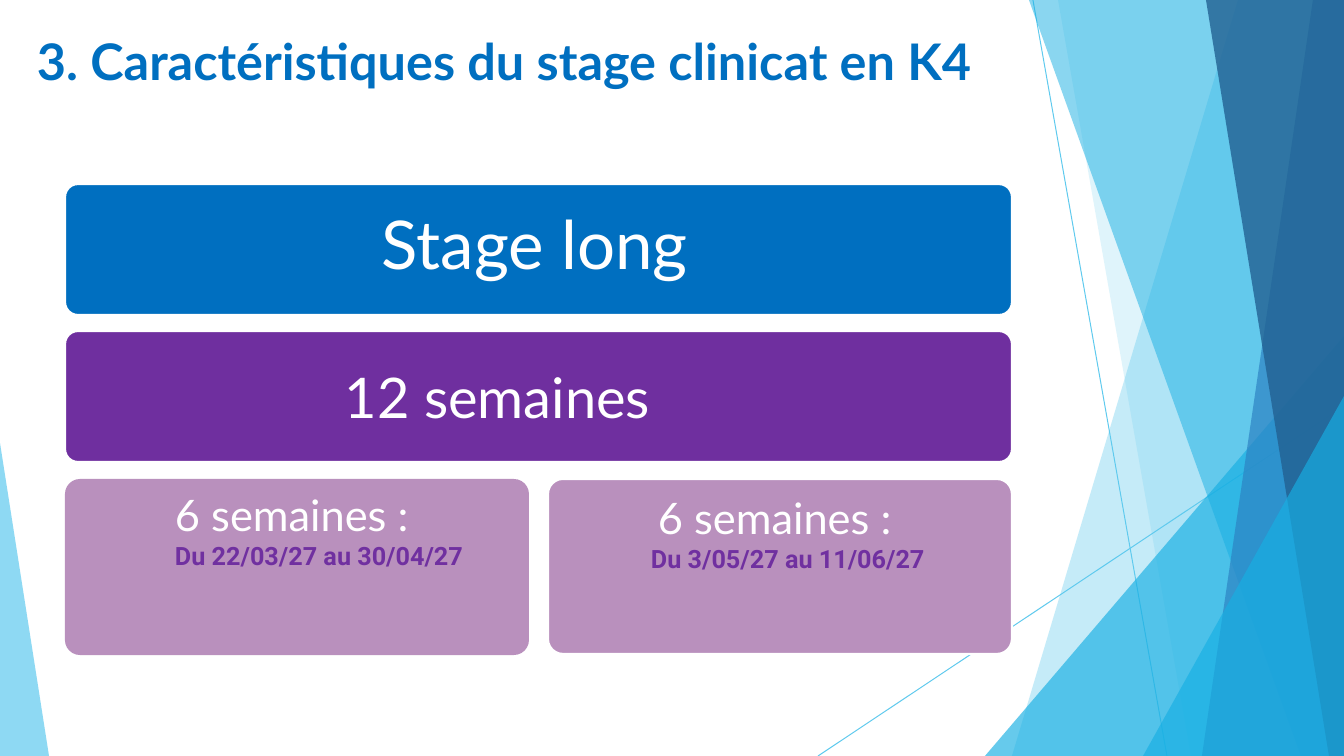
from typing import NamedTuple

from lxml.etree import SubElement
from pptx import Presentation
from pptx.dml.color import RGBColor
from pptx.enum.shapes import MSO_CONNECTOR, MSO_SHAPE
from pptx.oxml.ns import qn
from pptx.util import Emu, Pt

W, H = 1344, 756
SCALE = 12192000 / W

WHITE = RGBColor(0xFF, 0xFF, 0xFF)
BLUE = RGBColor(0x00, 0x6F, 0xC0)
PURPLE = RGBColor(0x6F, 0x2F, 0x9F)
MAUVE = RGBColor(0xB9, 0x90, 0xBD)
VIOLET = RGBColor(0x70, 0x30, 0xA0)
SKY = RGBColor(0x5F, 0xCA, 0xEE)
CYAN = RGBColor(0x17, 0xAF, 0xE3)
STEEL = RGBColor(0x2D, 0x83, 0xC3)
NAVY = RGBColor(0x22, 0x61, 0x92)


class Facet(NamedTuple):
    points: tuple[tuple[int, int], ...]
    color: RGBColor
    opacity: int


class Ray(NamedTuple):
    x1: int
    y1: int
    x2: int
    y2: int


class Panel(NamedTuple):
    x: int
    y: int
    w: int
    h: int
    color: RGBColor
    radius: int
    outlined: bool = True


class Line(NamedTuple):
    text: str
    size: int
    color: RGBColor = WHITE
    font: str = "Lato"
    bold: bool = False
    indent: int = 0
    spacing: float | None = None


class Label(NamedTuple):
    x: int
    y: int
    w: int
    h: int
    lines: tuple[Line, ...]


def band(top: int, bottom: int, color: RGBColor, opacity: int) -> Facet:
    """Return a full-height facet running to the right edge."""
    return Facet(((W, 0), (top, 0), (bottom, H), (W, H)), color, opacity)


def wedge(x: int, y: int, color: RGBColor, opacity: int) -> Facet:
    """Return a triangular facet in the lower right corner."""
    return Facet(((W, y), (x, H), (W, H)), color, opacity)


def stage_dates(x: int, y: int, indent: int, dates: str) -> Label:
    """Return the label of one six-week period."""
    return Label(x, y, 417, 82, (
        Line("6 semaines :", 31, indent=indent, spacing=34.8),
        Line(dates, 18, VIOLET, "Roboto", True),
    ))


RAYS = [Ray(1033, 0, 1167, H), Ray(W, 406, 818, H)]
FACETS = [
    band(1238, 1012, SKY, 36),
    band(1058, 1191, SKY, 20),
    wedge(985, 336, CYAN, 66),
    band(1029, 1301, CYAN, 50),
    band(1313, 1202, STEEL, 70),
    band(1206, 1329, NAVY, 80),
    wedge(1143, 396, CYAN, 66),
    Facet(((0, 443), (0, H), (49, H)), SKY, 70),
]
PANELS = [
    Panel(65, 184, 947, 131, BLUE, 13),
    Panel(65, 331, 947, 131, PURPLE, 13),
    Panel(65, 479, 464, 176, MAUVE, 15, False),
    Panel(548, 479, 464, 175, MAUVE, 15),
]
LABELS = [
    Label(37, 30, 999, 64, (
        Line("3. Caractéristiques du stage clinicat en K4", 36, BLUE, bold=True),)),
    Label(382, 202, 315, 84, (Line("Stage long", 48),)),
    Label(345, 363, 388, 70, (Line("12 semaines", 40),)),
    stage_dates(175, 492, 0, "Du 22/03/27 au 30/04/27"),
    stage_dates(651, 495, 7, "Du 3/05/27 au 11/06/27"),
]


def px(n: int) -> Emu:
    """Convert px to EMU."""
    return Emu(round(n * SCALE))


def draw_ray(s, ray: Ray) -> None:
    """Draw a thin decorative line."""
    c = s.shapes.add_connector(MSO_CONNECTOR.STRAIGHT, *map(px, ray))
    c.line.color.rgb = SKY
    c.line.width = Pt(0.72)
    SubElement(c._element.spPr, qn("a:effectLst"))


def draw_facet(s, facet: Facet) -> None:
    """Draw a translucent polygon."""
    fb = s.shapes.build_freeform(*facet.points[0], scale=SCALE)
    fb.add_line_segments(facet.points[1:], close=True)
    sp = fb.convert_to_shape()
    sp.shadow.inherit = False
    sp.fill.solid()
    sp.fill.fore_color.rgb = facet.color
    color = sp._element.spPr.find(".//" + qn("a:srgbClr"))
    SubElement(color, qn("a:alpha"), val=str(facet.opacity * 1000))
    sp.line.fill.background()


def draw_panel(s, panel: Panel) -> None:
    """Draw a rounded panel."""
    sp = s.shapes.add_shape(MSO_SHAPE.ROUNDED_RECTANGLE, *map(px, panel[:4]))
    sp.adjustments[0] = panel.radius / panel.h
    sp.shadow.inherit = False
    sp.fill.solid()
    sp.fill.fore_color.rgb = panel.color
    if panel.outlined:
        sp.line.color.rgb = WHITE
        sp.line.width = Pt(1.56)
    else:
        sp.line.fill.background()


def draw_label(s, label: Label) -> None:
    """Draw a text box with one paragraph per line."""
    tf = s.shapes.add_textbox(*map(px, label[:4])).text_frame
    tf.word_wrap = True
    tf.margin_left = tf.margin_top = tf.margin_right = tf.margin_bottom = 0
    for i, line in enumerate(label.lines):
        p = tf.add_paragraph() if i else tf.paragraphs[0]
        p.text = line.text
        p.font.name = line.font
        p.font.size = Pt(line.size)
        p.font.bold = line.bold
        p.font.color.rgb = line.color
        if line.spacing:
            p.line_spacing = Pt(line.spacing)
        if line.indent:
            p._p.get_or_add_pPr().set("marL", str(px(line.indent)))


def main() -> None:
    """Build the slide and save it."""
    prs = Presentation()
    prs.slide_width, prs.slide_height = px(W), px(H)
    s = prs.slides.add_slide(prs.slide_layouts[6])
    for ray in RAYS:
        draw_ray(s, ray)
    for facet in FACETS:
        draw_facet(s, facet)
    for panel in PANELS:
        draw_panel(s, panel)
    for label in LABELS:
        draw_label(s, label)
    prs.save("out.pptx")


if __name__ == "__main__":
    main()
